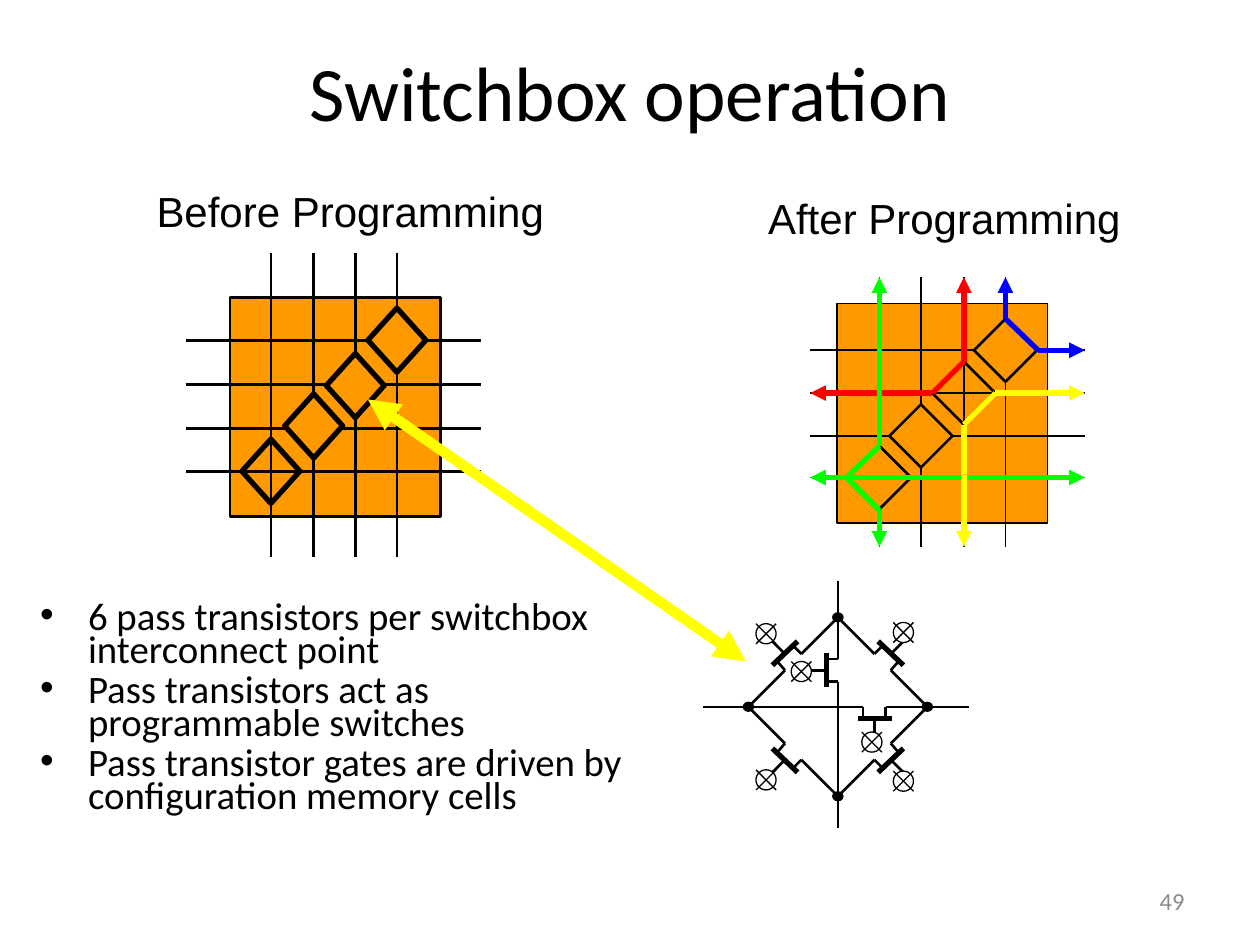
"""Build the "Switchbox operation" slide with its routing and transistor diagrams."""
from itertools import product

from lxml.etree import SubElement
from pptx import Presentation
from pptx.dml.color import RGBColor
from pptx.enum.shapes import MSO_CONNECTOR, MSO_SHAPE
from pptx.enum.text import MSO_ANCHOR, PP_ALIGN
from pptx.oxml.ns import qn
from pptx.util import Inches, Pt

BLACK = RGBColor(0x00, 0x00, 0x00)
WHITE = RGBColor(0xFF, 0xFF, 0xFF)
GRAY = RGBColor(0x8C, 0x8C, 0x8C)
ORANGE = RGBColor(0xFF, 0x99, 0x00)
RED = RGBColor(0xFF, 0x00, 0x00)
GREEN = RGBColor(0x00, 0xFF, 0x00)
BLUE = RGBColor(0x00, 0x00, 0xFF)
YELLOW = RGBColor(0xFF, 0xFF, 0x00)

deck = Presentation()
deck.slide_width, deck.slide_height = Inches(10), Inches(7.5)
page = deck.slides.add_slide(deck.slide_layouts[5])


def add_line(x1, y1, x2, y2, width=1.5, color=BLACK, arrows=()):
    line = page.shapes.add_connector(
        MSO_CONNECTOR.STRAIGHT, Inches(x1), Inches(y1), Inches(x2), Inches(y2))
    line.line.color.rgb = color
    line.line.width = Pt(width)
    for end in arrows:
        SubElement(line.line._get_or_add_ln(), qn(f"a:{end}"), type="triangle")
    SubElement(line._element.spPr, qn("a:effectLst"))


def add_centered(kind, x, y, width, height, fill, line_width):
    shape = page.shapes.add_shape(
        kind, Inches(x - width / 2), Inches(y - height / 2), Inches(width), Inches(height))
    shape.shadow.inherit = False
    shape.fill.solid()
    shape.fill.fore_color.rgb = fill
    shape.line.color.rgb = BLACK
    shape.line.width = Pt(line_width)


title = page.shapes.title
number, bullets, before, after = (
    page.shapes.add_textbox(0, 0, Inches(1), Inches(1)) for _ in range(4))
points = [
    "6 pass transistors per switchbox interconnect point",
    "Pass transistors act as programmable switches",
    "Pass transistor gates are driven by configuration memory cells",
]
texts = [
    (title, (0.5, 0.3, 9, 1.25), ["Switchbox operation"], PP_ALIGN.CENTER,
     {"name": "Calibri", "size": Pt(44)}, BLACK),
    (number, (7.17, 6.95, 2.33, 0.4), ["49"], PP_ALIGN.RIGHT,
     {"name": "Calibri", "size": Pt(14)}, GRAY),
    (bullets, (0.22, 4.75, 5.18, 1.79), points, PP_ALIGN.LEFT,
     {"name": "Calibri", "size": Pt(22.2)}, BLACK),
    (before, (1.06, 1.42, 3.44, 0.5), ["Before Programming"], PP_ALIGN.CENTER,
     {"name": "Arial", "size": Pt(24)}, BLACK),
    (after, (5.96, 1.48, 3.07, 0.5), ["After Programming"], PP_ALIGN.CENTER,
     {"name": "Arial", "size": Pt(24)}, BLACK),
]
for box, place, lines, alignment, font_format, color in texts:
    for name, value in zip(("left", "top", "width", "height"), place):
        setattr(box, name, Inches(value))
    frame = box.text_frame
    frame.word_wrap = True
    frame.vertical_anchor = MSO_ANCHOR.TOP
    frame.text = "\n".join(lines)
    for para in frame.paragraphs:
        para.alignment = alignment
        for name, value in font_format.items():
            setattr(para.runs[0].font, name, value)
        para.runs[0].font.color.rgb = color
number.text_frame.vertical_anchor = MSO_ANCHOR.MIDDLE

for para in bullets.text_frame.paragraphs:
    para.line_spacing = 0.7
    para.space_before = Pt(4.4)
    properties = para._p.get_or_add_pPr()
    properties.set("marL", str(Inches(0.38)))
    properties.set("indent", str(Inches(-0.38)))
    SubElement(properties, qn("a:buFont"), typeface="Arial")
    SubElement(properties, qn("a:buChar"), char="•")

before_columns = [2.15, 2.49, 2.82, 3.15]
before_rows = [2.7, 3.05, 3.4, 3.74]
before_diamonds = list(zip(before_columns, (3.74, 3.38, 3.06, 2.7)))
add_centered(MSO_SHAPE.RECTANGLE, 2.66, 3.23, 1.67, 1.74, ORANGE, 1.5)
add_centered(MSO_SHAPE.DIAMOND, *before_diamonds[0], 0.46, 0.51, ORANGE, 3)
for y in before_rows:
    add_line(1.48, y, 3.82, y)
for x in before_columns:
    add_line(x, 2.01, x, 4.42)
for x, y in before_diamonds[1:]:
    add_centered(MSO_SHAPE.DIAMOND, x, y, 0.46, 0.51, ORANGE, 3)

after_columns = [6.98, 7.31, 7.65, 7.98]
after_rows = [2.78, 3.12, 3.46, 3.79]
after_diamonds = list(zip(after_columns, reversed(after_rows)))
crossed_diamond = after_diamonds.pop(2)
add_centered(MSO_SHAPE.RECTANGLE, 7.48, 3.28, 1.67, 1.74, ORANGE, 1)
add_centered(MSO_SHAPE.DIAMOND, *crossed_diamond, 0.5, 0.5, ORANGE, 1.5)
for y in after_rows:
    add_line(6.43, y, 8.61, y, 1)
for x in after_columns:
    add_line(x, 2.2, x, 4.34, 1)
for x, y in after_diamonds:
    add_centered(MSO_SHAPE.DIAMOND, x, y, 0.5, 0.5, ORANGE, 1.5)

HEAD, TAIL = ("headEnd",), ("tailEnd",)
routes = [
    (RED, [((7.4, 3.12, 6.43, 3.12), TAIL), ((7.65, 2.2, 7.65, 2.87), HEAD),
           ((7.4, 3.12, 7.65, 2.87), ())]),
    (GREEN, [((6.98, 2.2, 6.98, 3.54), HEAD), ((6.98, 4.05, 6.98, 4.34), TAIL),
             ((6.72, 3.79, 6.98, 4.05), ()), ((6.72, 3.79, 6.98, 3.54), ()),
             ((6.43, 3.79, 8.61, 3.79), HEAD + TAIL)]),
    (YELLOW, [((7.9, 3.12, 8.61, 3.12), TAIL), ((7.65, 3.37, 7.65, 4.34), TAIL),
              ((7.65, 3.37, 7.9, 3.12), ())]),
    (BLUE, [((7.98, 2.2, 7.98, 2.53), HEAD), ((7.98, 2.53, 8.24, 2.78), ()),
            ((8.24, 2.78, 8.61, 2.78), TAIL)]),
]
for color, segments in routes:
    for segment, arrows in segments:
        add_line(*segment, 3, color, arrows)
add_line(2.92, 3.17, 5.92, 5.25, 6, YELLOW, HEAD + TAIL)

center_x, center_y = 6.65, 5.61
diagonal_transistor = [
    (0, 0.71, 0.29, 0.42, 1.5), (0.36, 0.49, 0.29, 0.42, 1.5),
    (0.32, 0.52, 0.52, 0.33, 3), (0.42, 0.42, 0.52, 0.52, 1.5),
    (0.48, 0.36, 0.42, 0.29, 1.5), (0.42, 0.29, 0.71, 0, 1.5),
]
for side_x, side_y in product((-1, 1), repeat=2):
    for x1, y1, x2, y2, width in diagonal_transistor:
        add_line(center_x + side_x * x1, center_y + side_y * y1,
                 center_x + side_x * x2, center_y + side_y * y2, width)

straight_transistor = [
    (0, -0.38, -0.09, -0.38, 1.5), (0, -0.2, -0.09, -0.2, 1.5),
    (-0.09, -0.43, -0.09, -0.16, 3), (-0.09, -0.29, -0.23, -0.29, 1.5),
]
for x1, y1, x2, y2, width in straight_transistor + [(0, -1, 0, -0.38, 1.5), (0, -0.2, 0, 0.96, 1.5)]:
    add_line(center_x + x1, center_y + y1, center_x + x2, center_y + y2, width)
for x1, y1, x2, y2, width in straight_transistor + [(0, -1.04, 0, -0.38, 1.5), (0, -0.2, 0, 1.07, 1.5)]:
    add_line(center_x - y1, center_y - x1, center_x - y2, center_y - x2, width)

for x, y in [(0, -0.71), (0.71, 0), (0, 0.71), (-0.71, 0)]:
    add_centered(MSO_SHAPE.OVAL, center_x + x, center_y + y, 0.07, 0.06, BLACK, 1.5)

memory_cells = [(6.08, 5.03), (7.17, 5.02), (6.08, 6.19), (7.17, 6.2), (6.92, 5.89), (6.36, 5.33)]
for x, y in memory_cells:
    add_centered(MSO_SHAPE.OVAL, x, y, 0.16, 0.16, WHITE, 0.75)
    for rise in (-0.08, 0.08):
        add_line(x - 0.08, y + rise, x + 0.08, y - rise, 0.75)

deck.save("out.pptx")
